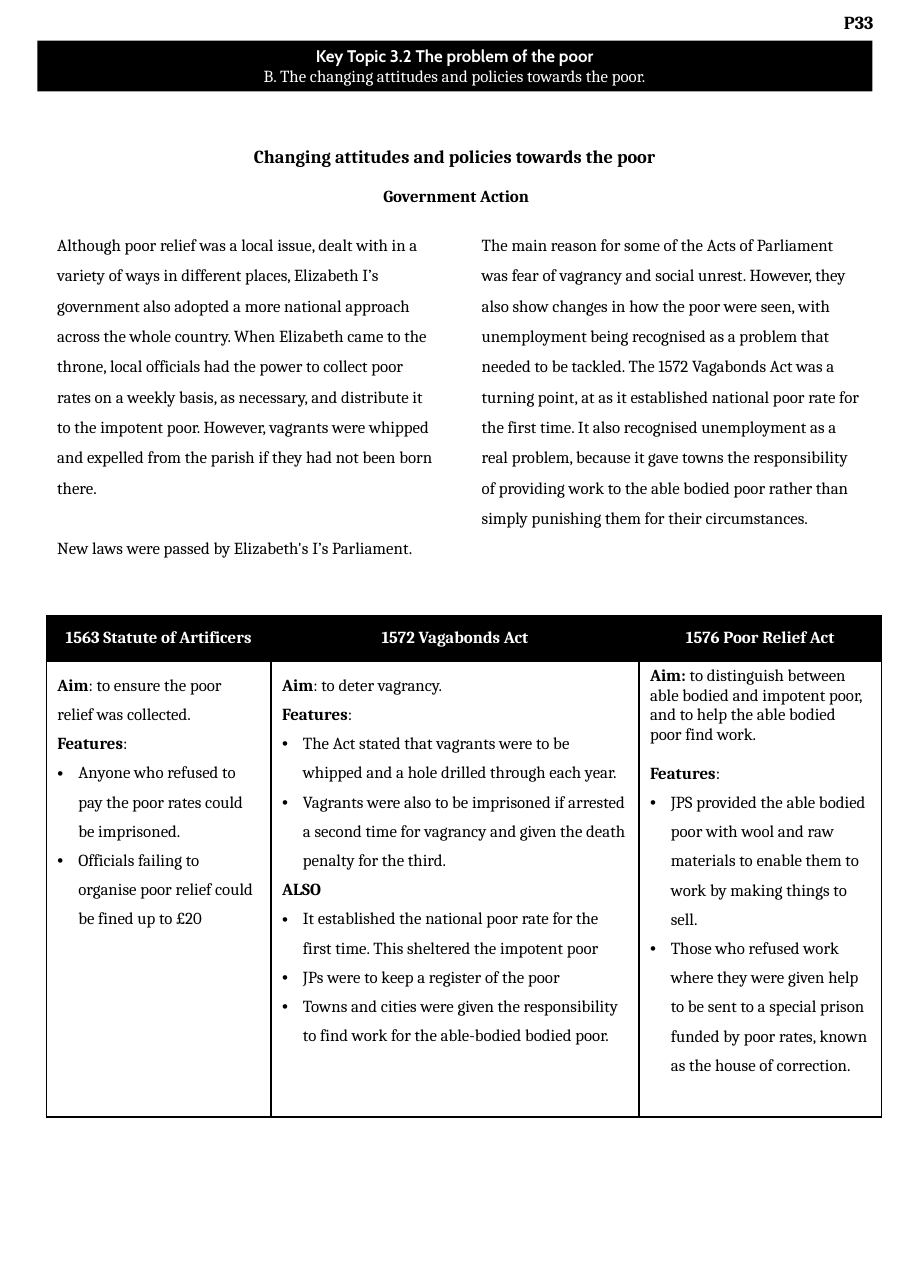
from dataclasses import dataclass

from lxml import etree
from pptx import Presentation
from pptx.dml.color import RGBColor
from pptx.enum.shapes import MSO_SHAPE
from pptx.enum.text import MSO_ANCHOR, MSO_AUTO_SIZE, PP_ALIGN
from pptx.oxml.ns import qn
from pptx.util import Cm, Pt

LEFT, CENTER = PP_ALIGN.LEFT, PP_ALIGN.CENTER
TOP, MIDDLE = MSO_ANCHOR.TOP, MSO_ANCHOR.MIDDLE
NO_AUTOFIT = MSO_AUTO_SIZE.NONE
RECTANGLE = MSO_SHAPE.RECTANGLE


@dataclass(frozen=True)
class Theme:
    ink: RGBColor = RGBColor(0, 0, 0)
    paper: RGBColor = RGBColor(255, 255, 255)
    serif: str = "Cambria"
    sans: str = "Cabin"
    body: int = 11
    heading: int = 12
    loose: float = 1.5
    border: int = 1


THEME = Theme()


def write(paragraph, text, bold_lead="", size=THEME.body, font=THEME.serif,
          color=THEME.ink, bold=False, align=LEFT, spacing=1.0,
          before=0, after=0, bullet=False):
    if bullet:
        properties = paragraph._p.get_or_add_pPr()
        properties.set("marL", str(Cm(0.48)))
        properties.set("indent", str(-Cm(0.48)))
        etree.SubElement(properties, qn("a:buFont")).set("typeface", "Arial")
        etree.SubElement(properties, qn("a:buChar")).set("char", "•")
    paragraph.alignment = align
    paragraph.line_spacing = spacing
    paragraph.space_before = Pt(before)
    paragraph.space_after = Pt(after)
    for words, weight in ((bold_lead, True), (text, bold)):
        if words:
            run = paragraph.add_run()
            run.text = words
            run.font.size = Pt(size)
            run.font.name = font
            run.font.bold = weight
            run.font.color.rgb = color


def lead(bold_lead, text="", **style):
    return {"bold_lead": bold_lead, "text": text, "spacing": THEME.loose, **style}


def point(text):
    return {"text": text, "bullet": True, "spacing": THEME.loose}


class Handout:
    def __init__(self, theme, slide):
        self.theme = theme
        self.slide = slide

    def fill_frame(self, frame, paragraphs, anchor=TOP, inset=0.13):
        frame.word_wrap = True
        frame.auto_size = NO_AUTOFIT
        frame.vertical_anchor = anchor
        frame.margin_left = frame.margin_right = Cm(0.25)
        frame.margin_top = frame.margin_bottom = Cm(inset)
        self.fill_paragraphs(frame, paragraphs)

    def fill_paragraphs(self, frame, paragraphs):
        for index, content in enumerate(paragraphs):
            paragraph = frame.add_paragraph() if index else frame.paragraphs[0]
            write(paragraph, **content)

    def title(self, box, text):
        heading = self.slide.shapes.title
        heading.left, heading.top, heading.width, heading.height = map(Cm, box)
        self.fill_frame(heading.text_frame, [
            {"text": text, "size": self.theme.heading, "bold": True,
             "align": CENTER, "spacing": self.theme.loose}])

    def text(self, box, paragraphs, inset=0.13):
        frame = self.slide.shapes.add_textbox(*map(Cm, box)).text_frame
        self.fill_frame(frame, paragraphs, inset=inset)
        return frame

    def columns(self, box, paragraphs, count, gap):
        body = self.text(box, paragraphs)._txBody.bodyPr
        body.set("numCol", str(count))
        body.set("spcCol", str(Cm(gap)))

    def banner(self, box, paragraphs):
        bar = self.slide.shapes.add_shape(RECTANGLE, *map(Cm, box))
        bar.shadow.inherit = False
        bar.fill.solid()
        bar.fill.fore_color.rgb = self.theme.ink
        bar.line.fill.background()
        self.fill_frame(bar.text_frame, paragraphs, MIDDLE, inset=0.25)

    def cell(self, cell, paragraphs, fill, anchor):
        properties = cell._tc.get_or_add_tcPr()
        for side in ("lnL", "lnR", "lnT", "lnB"):
            line = etree.SubElement(properties, qn(f"a:{side}"))
            line.set("w", str(Pt(self.theme.border)))
            solid = etree.SubElement(line, qn("a:solidFill"))
            etree.SubElement(solid, qn("a:srgbClr")).set("val", str(self.theme.ink))
        cell.fill.solid()
        cell.fill.fore_color.rgb = fill
        cell.vertical_anchor = anchor
        self.fill_paragraphs(cell.text_frame, paragraphs)

    def table(self, left, top, widths, heights, acts):
        table = self.slide.shapes.add_table(
            len(heights), len(widths), Cm(left), Cm(top),
            Cm(sum(widths)), Cm(sum(heights))).table
        table.first_row = table.horz_banding = False
        for row, height in zip(table.rows, heights):
            row.height = Cm(height)
        for index, (width, (act, details)) in enumerate(zip(widths, acts.items())):
            table.columns[index].width = Cm(width)
            header = [{"text": act, "bold": True, "align": CENTER,
                       "color": self.theme.paper}]
            self.cell(table.cell(0, index), header, self.theme.ink, MIDDLE)
            self.cell(table.cell(1, index), details, self.theme.paper, TOP)


ACTS = {
    "1563 Statute of Artificers": [
        lead("Aim", ": to ensure the poor relief was collected."),
        lead("Features", ":"),
        point("Anyone who refused to pay the poor rates could be imprisoned."),
        point("Officials failing to organise poor relief could be fined up to £20"),
    ],
    "1572 Vagabonds Act": [
        lead("Aim", ": to deter vagrancy."),
        lead("Features", ":"),
        point("The Act stated that vagrants were to be whipped and a hole drilled through each year."),
        point("Vagrants were also to be imprisoned if arrested a second time for vagrancy "
              "and given the death penalty for the third."),
        lead("ALSO"),
        point("It established the national poor rate for the first time. "
              "This sheltered the impotent poor"),
        point("JPs were to keep a register of the poor"),
        point("Towns and cities were given the responsibility to find work "
              "for the able-bodied bodied poor."),
    ],
    "1576 Poor Relief Act": [
        lead("Aim:", " to distinguish between able bodied and impotent poor, "
             "and to help the able bodied poor find work.", spacing=1.0),
        lead("Features", ":", spacing=1.0, before=13),
        point("JPS provided the able bodied poor with wool and raw materials "
              "to enable them to work by making things to sell."),
        point("Those who refused work where they were given help to be sent to a special prison "
              "funded by poor rates, known as the house of correction."),
    ],
}

GOVERNMENT_ROLE = (
    "Although poor relief was a local issue, dealt with in a variety of ways in different places, "
    "Elizabeth I’s government also adopted a more national approach across the whole country. "
    "When Elizabeth came to the throne, local officials had the power to collect poor rates on a "
    "weekly basis, as necessary, and distribute it to the impotent poor. However, vagrants were "
    "whipped and expelled from the parish if they had not been born there.")
NEW_LAWS = (
    "New laws were passed by Elizabeth's I’s Parliament. The main reason for some of the Acts of "
    "Parliament was fear of vagrancy and social unrest. However, they also show changes in how the "
    "poor were seen, with unemployment being recognised as a problem that needed to be tackled. "
    "The 1572 Vagabonds Act was a turning point, at as it established national poor rate for the "
    "first time. It also recognised unemployment as a real problem, because it gave towns the "
    "responsibility of providing work to the able bodied poor rather than simply punishing them "
    "for their circumstances.")


def main():
    deck = Presentation()
    deck.slide_width, deck.slide_height = Cm(21), Cm(29.7)
    handout = Handout(THEME, deck.slides.add_slide(deck.slide_layouts[5]))
    handout.text((19.02, 0, 1.55, 2.26), [
        {"text": "P33", "size": THEME.heading, "bold": True, "align": CENTER}], inset=0.25)
    handout.banner((0.86, 0.94, 19.25, 1.17), [
        {"text": "Key Topic 3.2 The problem of the poor", "font": THEME.sans,
         "bold": True, "color": THEME.paper, "align": CENTER},
        {"text": "B. The changing attitudes and policies towards the poor.",
         "color": THEME.paper, "align": CENTER}])
    handout.title((0.86, 2.97, 19.25, 0.94), "Changing attitudes and policies towards the poor")
    handout.columns((1.07, 5.05, 19.08, 8.23), [
        {"text": GOVERNMENT_ROLE, "spacing": THEME.loose, "after": 20},
        {"text": NEW_LAWS, "spacing": THEME.loose}], count=2, gap=0.99)
    handout.text((5.26, 3.91, 10.52, 0.86), [
        {"text": "Government Action", "bold": True, "align": CENTER, "spacing": THEME.loose}])
    handout.table(1.07, 14.2, (5.18, 8.48, 5.59), (1.04, 10.52), ACTS)
    deck.save("out.pptx")


if __name__ == "__main__":
    main()
